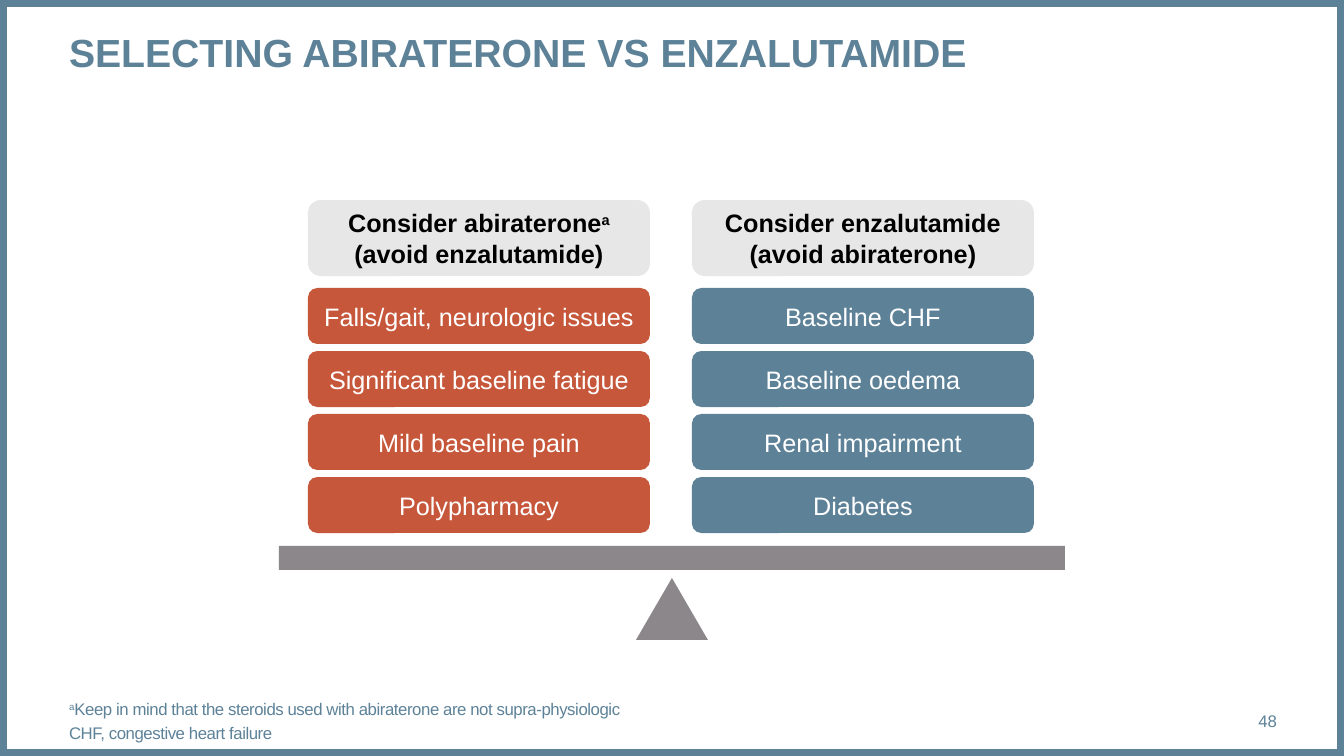
from pptx import Presentation
from pptx.dml.color import RGBColor
from pptx.enum.shapes import MSO_SHAPE as Shape
from pptx.enum.text import MSO_ANCHOR as Anchor, MSO_AUTO_SIZE as AutoSize, PP_ALIGN as Align
from pptx.oxml.ns import qn
from pptx.util import Pt

PX = 914400 / 100.8
BLUE = RGBColor(0x5D, 0x82, 0x98)
ORANGE = RGBColor(0xC6, 0x57, 0x3B)
GREY = RGBColor(0x8B, 0x87, 0x8B)
PALE = RGBColor(0xE8, 0xE7, 0xE8)
WHITE = RGBColor(0xFF, 0xFF, 0xFF)
BLACK = RGBColor(0, 0, 0)


def add_block(preset, left, top, width, height, fill):
    block = slide.shapes.add_shape(preset, *(round(v * PX) for v in (left, top, width, height)))
    block.shadow.inherit = False
    block.line.fill.background()
    if fill is None:
        block.fill.background()
    else:
        block.fill.solid()
        block.fill.fore_color.rgb = fill
    return block


def write(holder, lines, size, color, bold=False, align=Align.LEFT, anchor=Anchor.MIDDLE,
          before=0, spacing=0):
    """Each line is a list of runs; a run starting with ^ is superscript."""
    frame = holder.text_frame
    frame_format = dict(margin_left=0, margin_right=0, margin_top=0, margin_bottom=0,
                        word_wrap=True, auto_size=AutoSize.NONE, vertical_anchor=anchor)
    for name, value in frame_format.items():
        setattr(frame, name, value)
    for i, runs in enumerate(lines):
        line = frame.paragraphs[0] if i == 0 else frame.add_paragraph()
        line.alignment, line.space_before = align, Pt(before)
        for text in runs:
            run = line.add_run()
            run.text = text.lstrip("^")
            font_format = dict(name="Arial", size=Pt(size), bold=bold)
            for name, value in font_format.items():
                setattr(run.font, name, value)
            run.font.color.rgb = color
            props = run._r.get_or_add_rPr()
            if text.startswith("^"):
                props.set("baseline", "30000")
            if spacing:
                props.set("spc", str(spacing))


deck = Presentation()
deck.slide_width, deck.slide_height = round(1344 * PX), round(756 * PX)
slide = deck.slides.add_slide(deck.slide_layouts[1])

# Slide border
border = add_block(Shape.RECTANGLE, 0, 0, 1344, 756, None)
border.line.color.rgb = BLUE
border.line.width = Pt(10)

# Title and footnote
title, footnote = slide.placeholders
for holder, box in ((title, (69, 28, 1209, 95)), (footnote, (69, 701, 1121, 40))):
    holder.left, holder.top, holder.width, holder.height = (round(v * PX) for v in box)
write(title, [["SELECTING ABIRATERONE VS ENZALUTAMIDE"]], 28, BLUE, bold=True, anchor=Anchor.TOP)
write(footnote, [
    ["^a", "Keep in mind that the steroids used with abiraterone are not supra-physiologic"],
    ["CHF, congestive heart failure"],
], 12, BLUE, before=3, spacing=-30)
for line in footnote.text_frame.paragraphs:
    props = line._p.get_or_add_pPr()
    props.set("marL", "0")
    props.set("indent", "0")
    props.append(props.makeelement(qn("a:buNone"), {}))

# Slide number
page_number = slide.shapes.add_textbox(*(round(v * PX) for v in (1159, 701, 118, 40)))
write(page_number, [["48"]], 12, BLUE, align=Align.RIGHT)

# Balance: beam and pivot
add_block(Shape.RECTANGLE, 279, 546, 786, 24, GREY)
add_block(Shape.ISOSCELES_TRIANGLE, 636, 578, 72, 62, GREY)

# The two sides of the balance
sides = [
    (ORANGE, [["Consider abiraterone", "^a"], ["(avoid enzalutamide)"]],
     ["Falls/gait, neurologic issues", "Significant baseline fatigue",
      "Mild baseline pain", "Polypharmacy"]),
    (BLUE, [["Consider enzalutamide"], ["(avoid abiraterone)"]],
     ["Baseline CHF", "Baseline oedema", "Renal impairment", "Diabetes"]),
]
for col, (color, heading, reasons) in enumerate(sides):
    left = 308 + 384 * col
    header = add_block(Shape.ROUNDED_RECTANGLE, left, 200, 342, 76, PALE)
    write(header, heading, 18, BLACK, bold=True, align=Align.CENTER)
    for row, reason in enumerate(reasons):
        card = add_block(Shape.ROUNDED_RECTANGLE, left, 288 + 63 * row, 342, 56, color)
        write(card, [[reason]], 18, WHITE, align=Align.CENTER)

deck.save("out.pptx")
